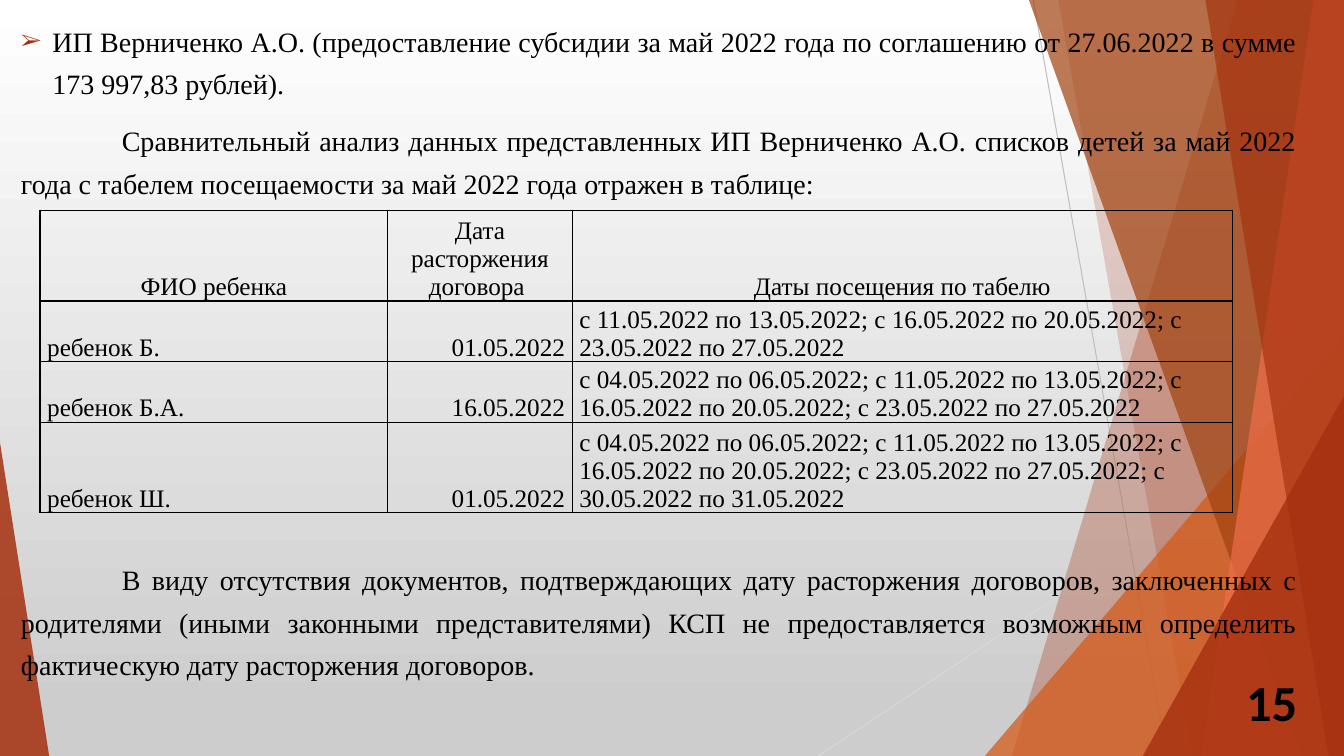
from lxml import etree
from pptx import Presentation
from pptx.dml.color import RGBColor
from pptx.enum.shapes import MSO_CONNECTOR, MSO_SHAPE
from pptx.enum.text import MSO_ANCHOR, PP_ALIGN
from pptx.oxml.ns import qn
from pptx.util import Cm, Pt

LEFT, CENTER, RIGHT, JUSTIFY = PP_ALIGN.LEFT, PP_ALIGN.CENTER, PP_ALIGN.RIGHT, PP_ALIGN.JUSTIFY
MIDDLE, BOTTOM = MSO_ANCHOR.MIDDLE, MSO_ANCHOR.BOTTOM
STRAIGHT, TRIANGLE = MSO_CONNECTOR.STRAIGHT, MSO_SHAPE.ISOSCELES_TRIANGLE

BLACK = RGBColor(0x00, 0x00, 0x00)
WHITE = RGBColor(0xFF, 0xFF, 0xFF)
SILVER = RGBColor(0xCD, 0xCD, 0xCD)
GREY = RGBColor(0xBF, 0xBF, 0xBF)
LIGHT_GREY = RGBColor(0xD9, 0xD9, 0xD9)
RED = RGBColor(0xA5, 0x30, 0x0F)
ORANGE = RGBColor(0xD5, 0x58, 0x16)
BROWN = RGBColor(0xA0, 0x42, 0x10)
CORAL = RGBColor(0xEE, 0x6E, 0x4A)
SERIF, SANS = "Times New Roman", "Calibri"

# Content
BULLET_TEXT = ("ИП Верниченко А.О. (предоставление субсидии за май 2022 года по соглашению "
               "от 27.06.2022 в сумме 173 997,83 рублей).")
ANALYSIS_TEXT = ("Сравнительный анализ данных представленных ИП Верниченко А.О. списков детей "
                 "за май 2022 года с табелем посещаемости за май 2022 года отражен в таблице:")
CONCLUSION_TEXT = ("В виду отсутствия документов, подтверждающих дату расторжения договоров, "
                   "заключенных с родителями (иными законными представителями) КСП не "
                   "предоставляется возможным определить фактическую дату расторжения договоров.")
PAGE_NUMBER = "15"
TABLE_ROWS = [
    ("ФИО ребенка", "Дата расторжения договора ", "Даты посещения по табелю"),
    ("ребенок Б.", "01.05.2022",
     "с 11.05.2022 по 13.05.2022; с 16.05.2022 по 20.05.2022; с 23.05.2022 по 27.05.2022"),
    ("ребенок Б.А.", "16.05.2022",
     "с 04.05.2022 по 06.05.2022; с 11.05.2022 по 13.05.2022; с 16.05.2022 по 20.05.2022; "
     "с 23.05.2022 по 27.05.2022"),
    ("ребенок Ш.", "01.05.2022",
     "с 04.05.2022 по 06.05.2022; с 11.05.2022 по 13.05.2022; с 16.05.2022 по 20.05.2022; "
     "с 23.05.2022 по 27.05.2022; с 30.05.2022 по 31.05.2022"),
]

# Geometry in centimetres
SLIDE_WIDTH, SLIDE_HEIGHT = 33.87, 19.05
TEXT_LEFT, TEXT_WIDTH = 0.53, 32.15
TABLE_LEFT, TABLE_TOP = 1.01, 5.3
COLUMN_WIDTHS = [8.76, 4.65, 16.64]
ROW_LINES = [3, 2, 2, 3]
LINE_HEIGHT = 0.75
COLUMN_ALIGNMENTS = [LEFT, RIGHT, LEFT]
RAYS = [((26.04, 0), (29.41, SLIDE_HEIGHT), GREY),
        ((SLIDE_WIDTH, 10.24), (20.62, SLIDE_HEIGHT), LIGHT_GREY)]
# Bands run to the right edge: top x, bottom x, colour, opacity
BACK_BANDS = [(31.19, 25.5, RED, 30), (26.67, 30.05, RED, 20)]
FRONT_BANDS = [(25.93, 32.79, BROWN, 70), (33.1, 30.28, CORAL, 70), (30.38, 33.48, RED, 65)]
# Wedges stand on the bottom edge: left, top, width, apex, colour, opacity
BACK_WEDGES = [(24.82, 8.46, 9.05, 1, ORANGE, 72)]
FRONT_WEDGES = [(28.8, 9.98, 5.07, 1, RED, 80), (0, 11.15, 1.24, 0, RED, 85)]


def write_text(frame, text, first=True, size=20, font=SERIF, bold=False, align=JUSTIFY,
               spacing=1.27, before=0, indent=0):
    paragraph = frame.paragraphs[0] if first else frame.add_paragraph()
    paragraph.alignment = align
    paragraph.line_spacing = spacing
    paragraph.space_before = Pt(before)
    if indent:
        paragraph._p.get_or_add_pPr().set("indent", str(Cm(indent)))
    run = paragraph.add_run()
    run.text = text
    run.font.size, run.font.name, run.font.bold = Pt(size), font, bold
    run.font.color.rgb = BLACK
    return paragraph


def add_text_frame(slide, left, top, width, height):
    frame = slide.shapes.add_textbox(Cm(left), Cm(top), Cm(width), Cm(height)).text_frame
    frame.word_wrap = True
    frame.margin_left = frame.margin_right = frame.margin_top = frame.margin_bottom = 0
    return frame


def add_bullet(paragraph, hanging):
    properties = paragraph._p.get_or_add_pPr()
    properties.set("marL", str(Cm(hanging)))
    properties.set("indent", str(-Cm(hanging)))
    color = etree.SubElement(properties, qn("a:buClr"))
    etree.SubElement(color, qn("a:srgbClr"), val=str(RED))
    etree.SubElement(properties, qn("a:buSzPct"), val="80000")
    etree.SubElement(properties, qn("a:buFont"), typeface=SERIF)
    etree.SubElement(properties, qn("a:buChar"), char="➢")


def paint(shape, color, opacity):
    shape.shadow.inherit = False
    shape.line.fill.background()
    shape.fill.solid()
    shape.fill.fore_color.rgb = color
    color_element = shape._element.spPr.find(qn("a:solidFill"))[0]
    etree.SubElement(color_element, qn("a:alpha"), val=str(opacity * 1000))


def add_bands(slide, bands):
    for top_x, bottom_x, color, opacity in bands:
        builder = slide.shapes.build_freeform(Cm(top_x), 0)
        corners = [(SLIDE_WIDTH, 0), (SLIDE_WIDTH, SLIDE_HEIGHT), (bottom_x, SLIDE_HEIGHT)]
        builder.add_line_segments([(Cm(x), Cm(y)) for x, y in corners])
        paint(builder.convert_to_shape(), color, opacity)


def add_wedges(slide, wedges):
    for left, top, width, apex, color, opacity in wedges:
        wedge = slide.shapes.add_shape(TRIANGLE, Cm(left), Cm(top), Cm(width),
                                       Cm(SLIDE_HEIGHT - top))
        wedge.adjustments[0] = apex
        paint(wedge, color, opacity)


def add_rays(slide):
    for start, end, color in RAYS:
        ray = slide.shapes.add_connector(STRAIGHT, *map(Cm, start + end))
        ray.line.color.rgb = color
        ray.line.width = Pt(0.75)
        etree.SubElement(ray._element.spPr, qn("a:effectLst"))


def add_borders(cell):
    properties = cell._tc.get_or_add_tcPr()
    for position, side in enumerate(("a:lnL", "a:lnR", "a:lnT", "a:lnB")):
        border = etree.Element(qn(side), w=str(Pt(1)))
        fill = etree.SubElement(border, qn("a:solidFill"))
        etree.SubElement(fill, qn("a:srgbClr"), val=str(BLACK))
        properties.insert(position, border)


def add_visits_table(slide):
    heights = [lines * LINE_HEIGHT for lines in ROW_LINES]
    table = slide.shapes.add_table(len(TABLE_ROWS), len(COLUMN_WIDTHS), Cm(TABLE_LEFT),
                                   Cm(TABLE_TOP), Cm(sum(COLUMN_WIDTHS)),
                                   Cm(sum(heights))).table
    table.first_row = table.horz_banding = False
    for column, width in zip(table.columns, COLUMN_WIDTHS):
        column.width = Cm(width)
    for row_index, (values, height) in enumerate(zip(TABLE_ROWS, heights)):
        table.rows[row_index].height = Cm(height)
        for column_index, value in enumerate(values):
            cell = table.cell(row_index, column_index)
            cell.fill.background()
            cell.vertical_anchor = BOTTOM
            cell.margin_left = cell.margin_right = Cm(0.18)
            cell.margin_top = cell.margin_bottom = 0
            align = COLUMN_ALIGNMENTS[column_index] if row_index else CENTER
            write_text(cell.text_frame, value, size=18, align=align, spacing=1.0)
            add_borders(cell)


def main():
    presentation = Presentation()
    presentation.slide_width, presentation.slide_height = Cm(SLIDE_WIDTH), Cm(SLIDE_HEIGHT)
    slide = presentation.slides.add_slide(presentation.slide_layouts[6])

    # Background
    background = slide.background.fill
    background.gradient()
    background.gradient_angle = 270
    for stop, color, position in zip(background.gradient_stops, (WHITE, SILVER), (0, 0.94)):
        stop.color.rgb = color
        stop.position = position

    # Facets
    add_rays(slide)
    add_bands(slide, BACK_BANDS)
    add_wedges(slide, BACK_WEDGES)
    add_bands(slide, FRONT_BANDS)
    add_wedges(slide, FRONT_WEDGES)

    # Text
    intro = add_text_frame(slide, TEXT_LEFT, 0.38, TEXT_WIDTH, 4.8)
    add_bullet(write_text(intro, BULLET_TEXT), hanging=0.79)
    write_text(intro, ANALYSIS_TEXT, first=False, before=10, indent=2.54)
    conclusion = add_text_frame(slide, TEXT_LEFT, 13.95, TEXT_WIDTH, 3.3)
    write_text(conclusion, CONCLUSION_TEXT, indent=2.54)

    # Table and page number
    add_visits_table(slide)
    number = add_text_frame(slide, 30.83, 17.17, 1.86, 1)
    number.vertical_anchor = MIDDLE
    write_text(number, PAGE_NUMBER, size=36, font=SANS, bold=True, align=RIGHT, spacing=1.0)

    presentation.save("out.pptx")


if __name__ == "__main__":
    main()
